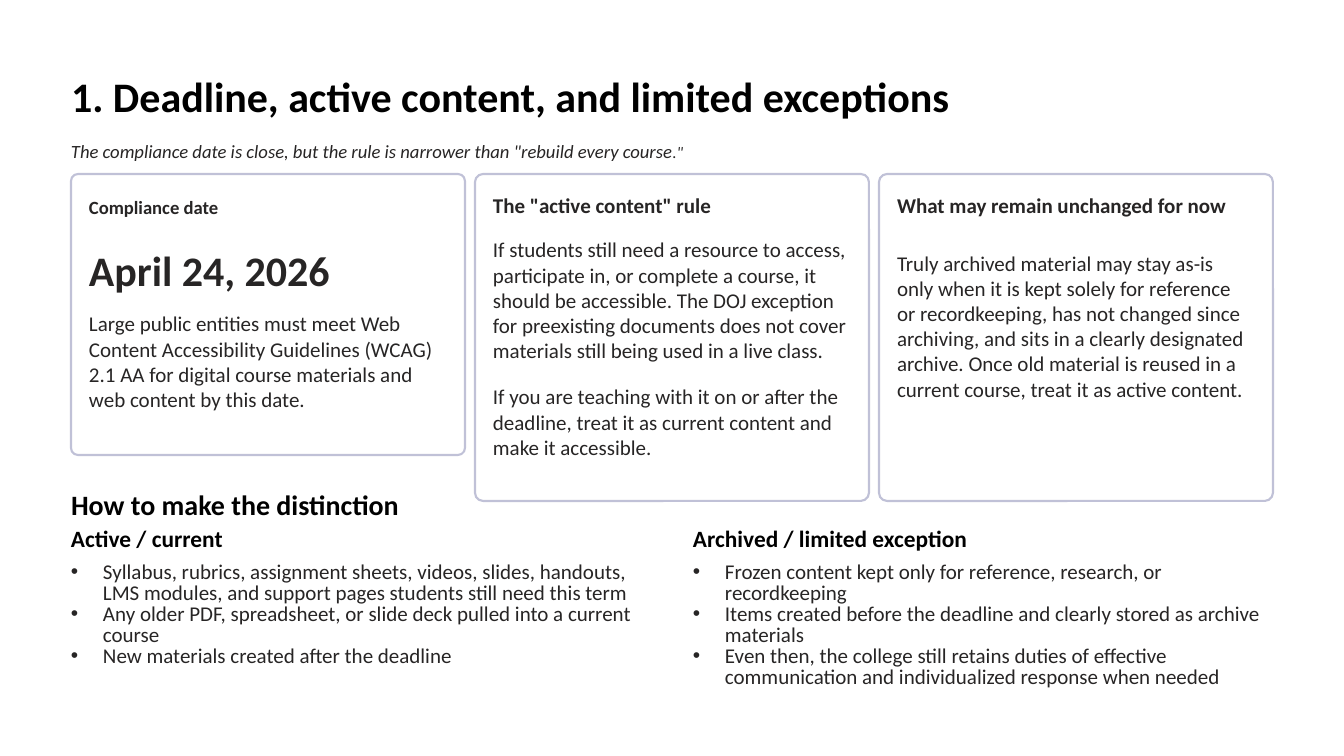
from dataclasses import dataclass

from lxml import etree
from pptx import Presentation
from pptx.dml.color import RGBColor
from pptx.enum.shapes import MSO_SHAPE
from pptx.enum.text import MSO_ANCHOR, PP_ALIGN
from pptx.oxml.ns import qn
from pptx.util import Emu, Pt

ROUNDED = MSO_SHAPE.ROUNDED_RECTANGLE
TOP = MSO_ANCHOR.TOP
LEFT = PP_ALIGN.LEFT


@dataclass(frozen=True)
class Theme:
    font: str = "Calibri"
    heading: str = "000000"
    ink: str = "272525"
    surface: str = "FFFFFF"
    border: str = "C0C1D7"
    title_size: int = 36
    section_size: int = 24
    column_size: int = 20
    body_size: int = 18
    small_size: int = 16
    quote_end_size: int = 14


THEME = Theme()
MARGIN = 71
CARD_TOP, CARD_WIDTH, CARD_STEP, CARD_PAD = 174, 394, 404, 18
CARD_TEXT_WIDTH = 357
BULLET_INDENT = 32

ACTIVE_RULE = [
    "If students still need a resource to access, participate in, or complete a "
    "course, it should be accessible. The DOJ exception for preexisting documents "
    "does not cover materials still being used in a live class.",
    "If you are teaching with it on or after the deadline, treat it as current "
    "content and make it accessible.",
]
DATE_RULE = [
    "Large public entities must meet Web Content Accessibility Guidelines (WCAG) "
    "2.1 AA for digital course materials and web content by this date.",
]
ARCHIVE_RULE = [
    "Truly archived material may stay as-is only when it is kept solely for "
    "reference or recordkeeping, has not changed since archiving, and sits in a "
    "clearly designated archive. Once old material is reused in a current course, "
    "treat it as active content.",
]
# heading, heading size, card height, body top, body paragraphs
CARDS = [
    ("Compliance date", THEME.small_size, 281, 311, DATE_RULE),
    ('The "active content" rule', THEME.body_size, 327, 237, ACTIVE_RULE),
    ("What may remain unchanged for now", THEME.body_size, 327, 250, ARCHIVE_RULE),
]
# left, heading, bullets
COLUMNS = [
    (MARGIN, "Active / current", [
        "Syllabus, rubrics, assignment sheets, videos, slides, handouts, LMS modules, "
        "and support pages students still need this term",
        "Any older PDF, spreadsheet, or slide deck pulled into a current course",
        "New materials created after the deadline",
    ]),
    (693, "Archived / limited exception", [
        "Frozen content kept only for reference, research, or recordkeeping",
        "Items created before the deadline and clearly stored as archive materials",
        "Even then, the college still retains duties of effective communication and "
        "individualized response when needed",
    ]),
]


def px(n):
    return Emu(round(n * 914400 / 84))


def rgb(value):
    return RGBColor.from_string(value)


def style_run(r, size, color, bold=False, italic=False):
    r.font.name = THEME.font
    r.font.size = Pt(size)
    r.font.color.rgb = rgb(color)
    r.font.bold = bold
    r.font.italic = italic


def add_bullet(p):
    pPr = p._p.get_or_add_pPr()
    pPr.set("marL", str(px(BULLET_INDENT)))
    pPr.set("indent", str(-px(BULLET_INDENT)))
    etree.SubElement(pPr, qn("a:buFont")).set("typeface", "Arial")
    etree.SubElement(pPr, qn("a:buChar")).set("char", "•")


def add_text(s, box, paragraphs, size, color=THEME.ink, line=None, gap=0,
             bold=False, italic=False, bullets=False):
    """Place paragraphs in a box; line is an exact line height in points."""
    tf = s.shapes.add_textbox(*map(px, box)).text_frame
    tf.word_wrap = True
    tf.vertical_anchor = TOP
    tf.margin_left = tf.margin_right = tf.margin_top = tf.margin_bottom = 0
    for i, text in enumerate(paragraphs):
        p = tf.paragraphs[0] if i == 0 else tf.add_paragraph()
        p.text = text
        p.alignment = LEFT
        if line:
            p.line_spacing = Pt(line)
        if i and gap:
            p.space_before = Pt(gap)
        if bullets:
            add_bullet(p)
        for r in p.runs:
            style_run(r, size, color, bold, italic)
    return tf


def add_card(s, left, heading, heading_size, height, body_top, body):
    sp = s.shapes.add_shape(ROUNDED, px(left), px(CARD_TOP), px(CARD_WIDTH), px(height))
    sp.adjustments[0] = 0.025
    sp.shadow.inherit = False
    sp.fill.solid()
    sp.fill.fore_color.rgb = rgb(THEME.surface)
    sp.line.color.rgb = rgb(THEME.border)
    sp.line.width = Pt(1.8)
    x = left + CARD_PAD
    add_text(s, (x, 193, CARD_TEXT_WIDTH, 25), [heading], heading_size,
             line=21.5, bold=True)
    add_text(s, (x, body_top, CARD_TEXT_WIDTH, CARD_TOP + height - body_top - CARD_PAD),
             body, THEME.body_size, gap=18)


def add_column(s, left, heading, items):
    add_text(s, (left, 527, 581, 25), [heading], THEME.column_size,
             THEME.heading, line=21.5, bold=True)
    add_text(s, (left, 563, 581, 114), items, THEME.body_size, line=18, bullets=True)


def main():
    prs = Presentation()
    prs.slide_width, prs.slide_height = px(1344), px(756)
    s = prs.slides.add_slide(prs.slide_layouts[6])

    add_text(s, (MARGIN, 70, 1005, 51),
             ["1. Deadline, active content, and limited exceptions"],
             THEME.title_size, THEME.heading, line=43.5, bold=True)
    tf = add_text(s, (MARGIN, 141, 1203, 21),
                  ['The compliance date is close, but the rule is narrower than '
                   '"rebuild every course'],
                  THEME.small_size, line=18, italic=True)
    r = tf.paragraphs[0].add_run()
    r.text = '."'
    style_run(r, THEME.quote_end_size, THEME.ink, italic=True)

    for i, card in enumerate(CARDS):
        add_card(s, MARGIN + i * CARD_STEP, *card)
    add_text(s, (MARGIN + CARD_PAD, 224, CARD_TEXT_WIDTH, 76), ["April 24, 2026"],
             THEME.title_size, line=60.5, bold=True)

    add_text(s, (MARGIN, 491, 333, 31), ["How to make the distinction"],
             THEME.section_size, THEME.heading, line=26, bold=True)
    for column in COLUMNS:
        add_column(s, *column)

    prs.save("out.pptx")


if __name__ == "__main__":
    main()
